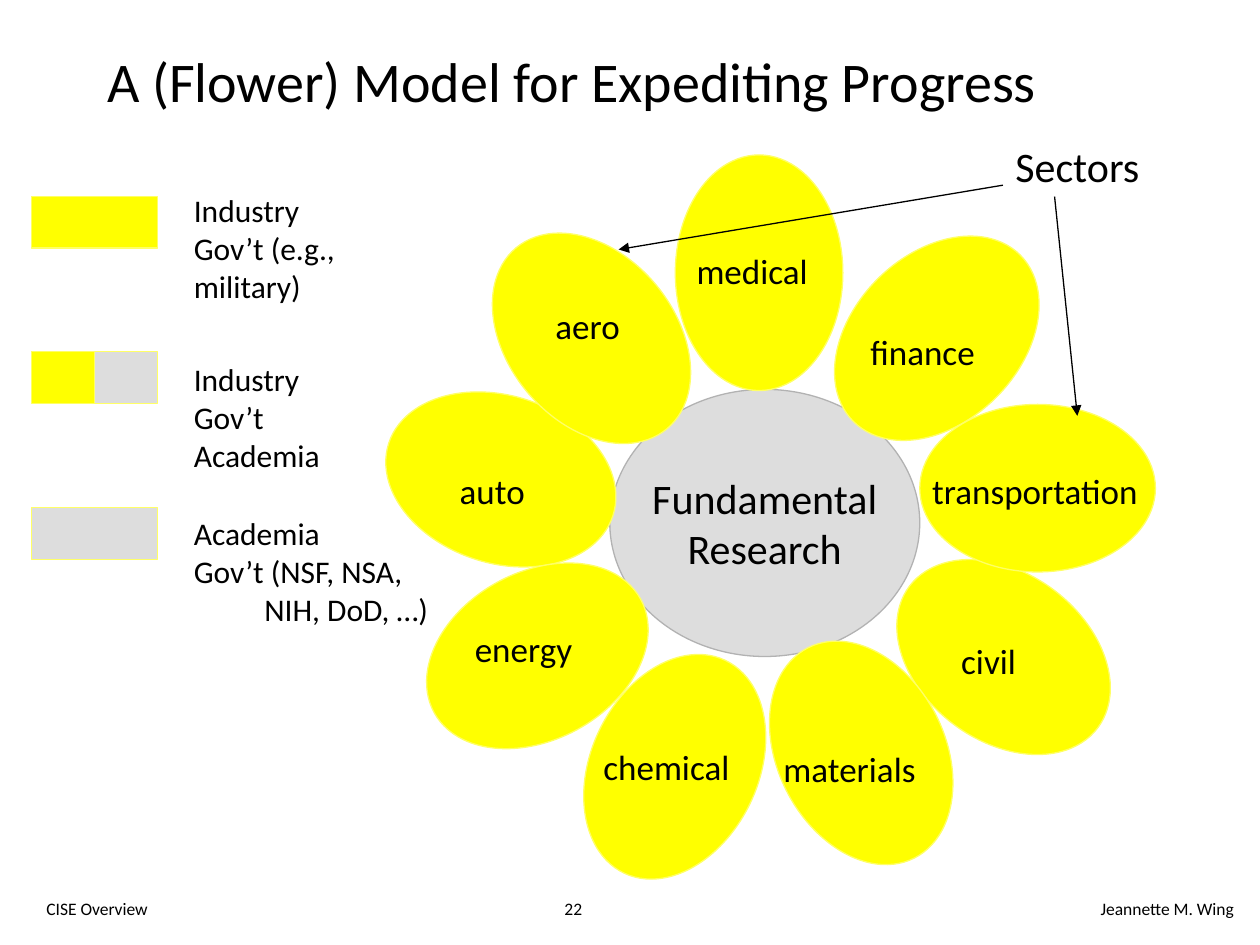
from lxml.etree import SubElement
from pptx import Presentation
from pptx.dml.color import RGBColor
from pptx.enum.shapes import MSO_CONNECTOR, MSO_SHAPE
from pptx.enum.text import MSO_ANCHOR, MSO_AUTO_SIZE, PP_ALIGN
from pptx.oxml.ns import qn
from pptx.util import Pt

PX = 9144  # 100 px to the inch
FONT = "Calibri"
BLACK = RGBColor(0x00, 0x00, 0x00)
YELLOW = RGBColor(0xFF, 0xFF, 0x00)
PALE_YELLOW = RGBColor(0xFF, 0xFF, 0x66)
GREY = RGBColor(0xDD, 0xDD, 0xDD)
MID_GREY = RGBColor(0xB2, 0xB2, 0xB2)

PETAL_W, PETAL_H = 133, 187
# name, petal left and top, rotation, label left, top and width
PETALS = [
    ("auto", 31, 167, 287.8, 55, 248, 72),
    ("finance", 377, 55, 45.1, 381, 137, 103),
    ("civil", 430, 308, 127, 453, 383, 71),
    ("aero", 103, 55, 320.2, 131, 117, 72),
    ("medical", 236, 3, 0, 243, 73, 147),
    ("chemical", 169, 395, 205.4, 169, 467, 121),
    ("materials", 317, 384, 153.2, 312, 468, 126),
    ("energy", 60, 307, 241.1, 67, 373, 153),
    ("transportation", 457, 174, 90, 430, 248, 250),
]
# swatch top, swatch colours, text top, width, height, right inset, lines, last indent
LEGEND = [
    (9, [YELLOW], 0, 222, 70, 40, ["Industry", "Gov’t (e.g., military)"], 0),
    (132, [YELLOW, GREY], 134, 120, 100, 0, ["Industry", "Gov’t", "Academia"], 0),
    (256, [GREY], 256, 288, 100, 0,
     ["Academia", "Gov’t (NSF, NSA,", "NIH, DoD, …)"], 56),
]


def emu(*lengths):
    return [round(length * PX) for length in lengths]


def write(frame, lines, size, align=PP_ALIGN.LEFT, **frame_format):
    settings = {"word_wrap": True, "auto_size": MSO_AUTO_SIZE.NONE, **frame_format}
    for name, value in settings.items():
        setattr(frame, name, value)
    for index, line in enumerate(lines):
        paragraph = frame.add_paragraph() if index else frame.paragraphs[0]
        paragraph.alignment = align
        run = paragraph.add_run()
        run.text = line
        run.font.color.rgb = BLACK
        for name, value in {"name": FONT, "size": Pt(size)}.items():
            setattr(run.font, name, value)
    return paragraph


def add_text(slide, box, lines, size, align=PP_ALIGN.LEFT, inset_right=10):
    frame = slide.shapes.add_textbox(*emu(*box)).text_frame
    return write(frame, lines, size, align, margin_right=inset_right * PX)


def add_filled(slide, kind, box, fill, line, rotation=0):
    shape = slide.shapes.add_shape(kind, *emu(*box))
    shape.shadow.inherit = False
    shape.fill.solid()
    shape.fill.fore_color.rgb = fill
    shape.line.color.rgb = line
    shape.line.width = Pt(0.75)
    shape.rotation = rotation
    return shape


def add_arrow(slide, start, end):
    arrow = slide.shapes.add_connector(MSO_CONNECTOR.STRAIGHT, *emu(*start, *end))
    arrow.line.color.rgb = BLACK
    arrow.line.width = Pt(0.75)
    SubElement(arrow.line._get_or_add_ln(), qn("a:tailEnd"), type="triangle")
    SubElement(arrow._element.spPr, qn("a:effectLst"))


def add_title(slide, box):
    title = slide.shapes.title
    for name, value in zip(("left", "top", "width", "height"), emu(*box)):
        setattr(title, name, value)
    write(title.text_frame, ["A (Flower) Model for Expediting Progress"], 32,
          vertical_anchor=MSO_ANCHOR.MIDDLE)


def add_footer(slide, left, top):
    for offset, width, words, align in (
        (324, 208, "22", PP_ALIGN.CENTER),
        (0, 208, "CISE Overview", PP_ALIGN.LEFT),
        (664, 298, "Jeannette M. Wing", PP_ALIGN.RIGHT),
    ):
        add_text(slide, (left + offset, top, width, 33), [words], 10, align)


def add_flower(slide, left, top):
    # Centre
    centre = add_filled(slide, MSO_SHAPE.OVAL, (left + 184, top + 189, 246, 212),
                        GREY, MID_GREY)
    write(centre.text_frame, ["Fundamental", "Research"], 24, PP_ALIGN.CENTER,
          word_wrap=False, vertical_anchor=MSO_ANCHOR.MIDDLE)
    # Petals with their labels
    for name, x, y, rotation, label_x, label_y, label_w in PETALS:
        add_filled(slide, MSO_SHAPE.OVAL, (left + x, top + y, PETAL_W, PETAL_H),
                   YELLOW, PALE_YELLOW, rotation)
        add_text(slide, (left + label_x, top + label_y, label_w, 43), [name], 20,
                 inset_right=0)


def add_legend(slide, left, top):
    for swatch_y, colours, text_y, width, height, inset, lines, indent in LEGEND:
        part = 100 // len(colours)
        for index, colour in enumerate(colours):
            add_filled(slide, MSO_SHAPE.RECTANGLE,
                       (left + index * part, top + swatch_y, part, 41),
                       colour, PALE_YELLOW)
        last = add_text(slide, (left + 119, top + text_y, width, height), lines, 18,
                        inset_right=inset)
        if indent:
            last._p.get_or_add_pPr().set("marL", str(indent * PX))


def add_sectors(slide, left, top):
    add_text(slide, (left, top, 119, 50), ["Sectors"], 24, inset_right=0)
    add_arrow(slide, (left, top + 40), (left - 305, top + 91))
    add_arrow(slide, (left + 41, top + 49), (left + 59, top + 223))


def main():
    deck = Presentation()
    deck.slide_width, deck.slide_height = emu(1000, 750)
    slide = deck.slides.add_slide(deck.slide_layouts[5])  # title only
    add_footer(slide, 27, 708)
    add_title(slide, (75, 26, 850, 75))
    add_flower(slide, 300, 120)
    add_legend(slide, 25, 147)
    add_sectors(slide, 796, 107)
    deck.save("out.pptx")


if __name__ == "__main__":
    main()
